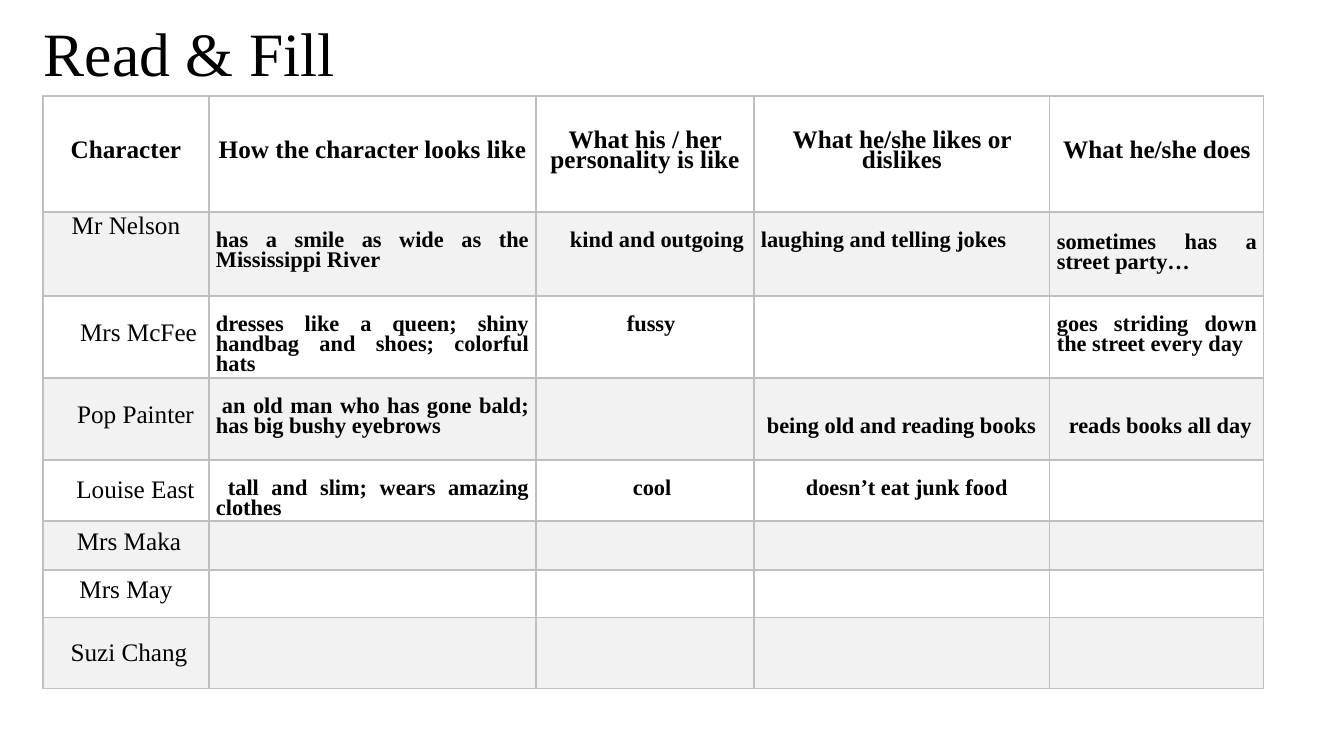
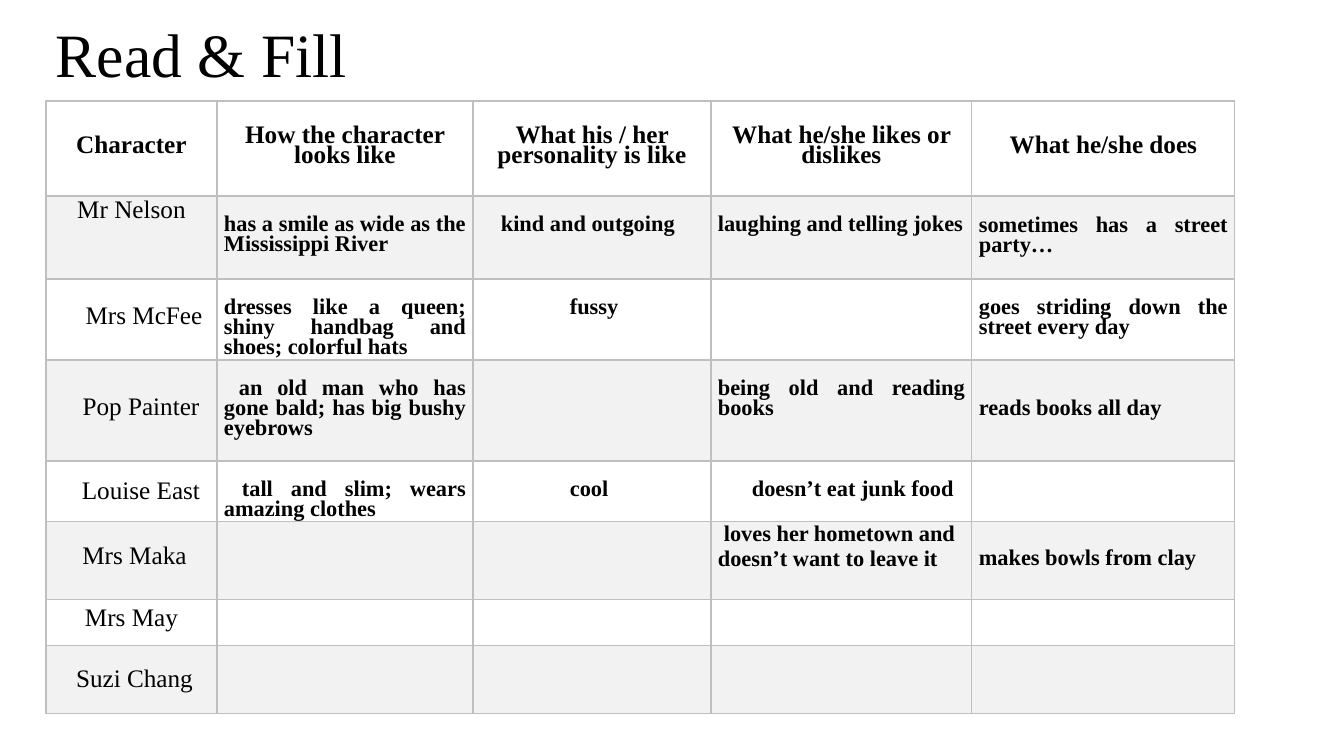
from pptx import Presentation
from pptx.dml.color import RGBColor
from pptx.enum.text import MSO_ANCHOR, PP_ALIGN
from pptx.oxml import parse_xml
from pptx.oxml.ns import nsdecls
from pptx.util import Emu, Pt

# Shared look
COLORS = {"ink": "000000", "plain": "FFFFFF", "band": "F2F2F2", "grid": "BFBFBF"}
FONT = "Times New Roman"
SCALE = 914400 / 100.8  # EMU in one px
SLIDE_SIZE = (1344, 756)
LINE = 20  # px in one table line
TIGHT = Pt(14.4)
SIDE = 7  # cell side margin in px

TITLE = "Read & Fill"
HEADINGS = ["Character", "How the character looks like",
            "What his / her personality is like",
            "What he/she likes or dislikes", "What he/she does"]
LOOKS, PERSONALITY, LIKES, DOES = range(1, 5)

# Name, left inset in px, line spacing, anchor
CHARACTERS = [
    ("Mr Nelson", 0, 1.0, MSO_ANCHOR.TOP),
    ("Mrs McFee", 25, TIGHT, MSO_ANCHOR.MIDDLE),
    ("Pop Painter", 19, TIGHT, MSO_ANCHOR.MIDDLE),
    ("Louise East", 19, 1.0, MSO_ANCHOR.MIDDLE),
    ("Mrs Maka", 6, TIGHT, MSO_ANCHOR.MIDDLE),
    ("Mrs May", 0, TIGHT, MSO_ANCHOR.MIDDLE),
    ("Suzi Chang", 6, 1.0, MSO_ANCHOR.MIDDLE),
]

# Answers on both slides, by character and column
ANSWERS = {
    ("Mr Nelson", LOOKS): "has a smile as wide as the Mississippi River",
    ("Mr Nelson", PERSONALITY): "kind and outgoing",
    ("Mr Nelson", LIKES): "laughing and telling jokes",
    ("Mr Nelson", DOES): "sometimes has a street party…",
    ("Mrs McFee", LOOKS): "dresses like a queen; shiny handbag and shoes; colorful hats",
    ("Mrs McFee", PERSONALITY): "fussy",
    ("Mrs McFee", DOES): "goes striding down the street every day",
    ("Pop Painter", LOOKS): "an old man who has gone bald; has big bushy eyebrows",
    ("Pop Painter", LIKES): "being old and reading books",
    ("Pop Painter", DOES): "reads books all day",
    ("Louise East", LOOKS): "tall and slim; wears amazing clothes",
    ("Louise East", PERSONALITY): "cool",
    ("Louise East", LIKES): "doesn’t eat junk food",
}
MAKA_ANSWERS = {
    ("Mrs Maka", LIKES): "loves her hometown and doesn’t want to leave it",
    ("Mrs Maka", DOES): "makes bowls from clay",
}

# Answers that leave the usual format
SPECIAL = {
    ("Mr Nelson", DOES): {"top": 0, "anchor": MSO_ANCHOR.MIDDLE},
    ("Pop Painter", DOES): {"top": 2 * LINE},
    ("Mrs Maka", LIKES): {"top": 0, "spacing": 1.0, "align": PP_ALIGN.LEFT},
    ("Mrs Maka", DOES): {"top": 0, "anchor": MSO_ANCHOR.MIDDLE},
}

# Per slide: places, grid in px, answers, first-line indents in px
SLIDES = [
    {
        "title": (34, 18, 1159, 78), "table": (43, 96),
        "columns": [166, 327, 218, 296, 214],
        "rows": [116, 84, 82, 82, 61, 49, 48, 71],
        "answers": ANSWERS,
        "special": SPECIAL | {("Pop Painter", LIKES): {"top": 2 * LINE}},
        "indents": {
            ("Mr Nelson", PERSONALITY): 27, ("Mrs McFee", PERSONALITY): 84,
            ("Pop Painter", LOOKS): 6, ("Pop Painter", LIKES): 6,
            ("Pop Painter", DOES): 12, ("Louise East", LOOKS): 12,
            ("Louise East", PERSONALITY): 90, ("Louise East", LIKES): 45,
        },
    },
    {
        "title": (46, 14, 1159, 87), "table": (46, 101),
        "columns": [171, 256, 238, 261, 263],
        "rows": [95, 83, 81, 101, 60, 78, 46, 68],
        "answers": ANSWERS | MAKA_ANSWERS,
        "special": SPECIAL,
        "indents": {
            ("Mr Nelson", PERSONALITY): 21, ("Mrs McFee", PERSONALITY): 90,
            ("Pop Painter", LOOKS): 15, ("Louise East", LOOKS): 18,
            ("Louise East", PERSONALITY): 90, ("Louise East", LIKES): 34,
            ("Mrs Maka", LIKES): 6,
        },
    },
]


def px(length):
    return Emu(round(length * SCALE))


def set_all(target, values):
    for name, value in values.items():
        setattr(target, name, value)


def write(frame, text, size, bold=False, align=PP_ALIGN.LEFT, spacing=TIGHT, indent=0):
    paragraph = frame.paragraphs[0]
    set_all(paragraph, {"alignment": align, "line_spacing": spacing})
    if indent:
        paragraph._p.get_or_add_pPr().set("indent", str(px(indent)))
    run = paragraph.add_run()
    run.text = text
    set_all(run.font, {"name": FONT, "size": Pt(size), "bold": bold})
    run.font.color.rgb = RGBColor.from_string(COLORS["ink"])


def style_cell(cell, fill, left=SIDE, top=0, anchor=MSO_ANCHOR.TOP):
    set_all(cell, {"margin_left": px(left), "margin_right": px(SIDE),
                   "margin_top": px(top), "margin_bottom": 0,
                   "vertical_anchor": anchor})
    properties = cell._tc.get_or_add_tcPr()
    for edge in ("lnL", "lnR", "lnT", "lnB"):
        properties.append(parse_xml(
            f'<a:{edge} {nsdecls("a")} w="{Pt(1)}"><a:solidFill>'
            f'<a:srgbClr val="{COLORS["grid"]}"/></a:solidFill></a:{edge}>'))
    cell.fill.solid()
    cell.fill.fore_color.rgb = RGBColor.from_string(COLORS[fill])


def add_title(slide, box):
    frame = slide.shapes.add_textbox(*map(px, box)).text_frame
    set_all(frame, {"word_wrap": True, "vertical_anchor": MSO_ANCHOR.MIDDLE})
    write(frame, TITLE, 44, spacing=0.9)


def add_character_table(slide, page):
    columns, rows = page["columns"], page["rows"]
    place = (*page["table"], sum(columns), sum(rows))
    grid = slide.shapes.add_table(len(rows), len(columns), *map(px, place)).table
    set_all(grid, {"first_row": False, "horz_banding": False})
    for column, width in zip(grid.columns, columns):
        column.width = px(width)
    for row, height in zip(grid.rows, rows):
        row.height = px(height)

    # Heading row
    for number, heading in enumerate(HEADINGS):
        cell = grid.cell(0, number)
        style_cell(cell, "plain", anchor=MSO_ANCHOR.MIDDLE)
        write(cell.text_frame, heading, 18, True, PP_ALIGN.CENTER)

    # Characters and their answers
    for number, (name, inset, spacing, anchor) in enumerate(CHARACTERS, 1):
        fill = "band" if number % 2 else "plain"
        cell = grid.cell(number, 0)
        style_cell(cell, fill, left=SIDE + inset, anchor=anchor)
        write(cell.text_frame, name, 18, align=PP_ALIGN.CENTER, spacing=spacing)
        for topic in range(LOOKS, DOES + 1):
            key = (name, topic)
            cell = grid.cell(number, topic)
            if key not in page["answers"]:
                style_cell(cell, fill)
                continue
            look = {"top": LINE, "anchor": MSO_ANCHOR.TOP, "spacing": TIGHT,
                    "align": PP_ALIGN.JUSTIFY} | page["special"].get(key, {})
            style_cell(cell, fill, top=look["top"], anchor=look["anchor"])
            write(cell.text_frame, page["answers"][key], 16, True, look["align"],
                  look["spacing"], page["indents"].get(key, 0))


def main():
    deck = Presentation()
    deck.slide_width, deck.slide_height = map(px, SLIDE_SIZE)
    for page in SLIDES:
        slide = deck.slides.add_slide(deck.slide_layouts[6])
        add_title(slide, page["title"])
        add_character_table(slide, page)
    deck.save("out.pptx")


if __name__ == "__main__":
    main()
